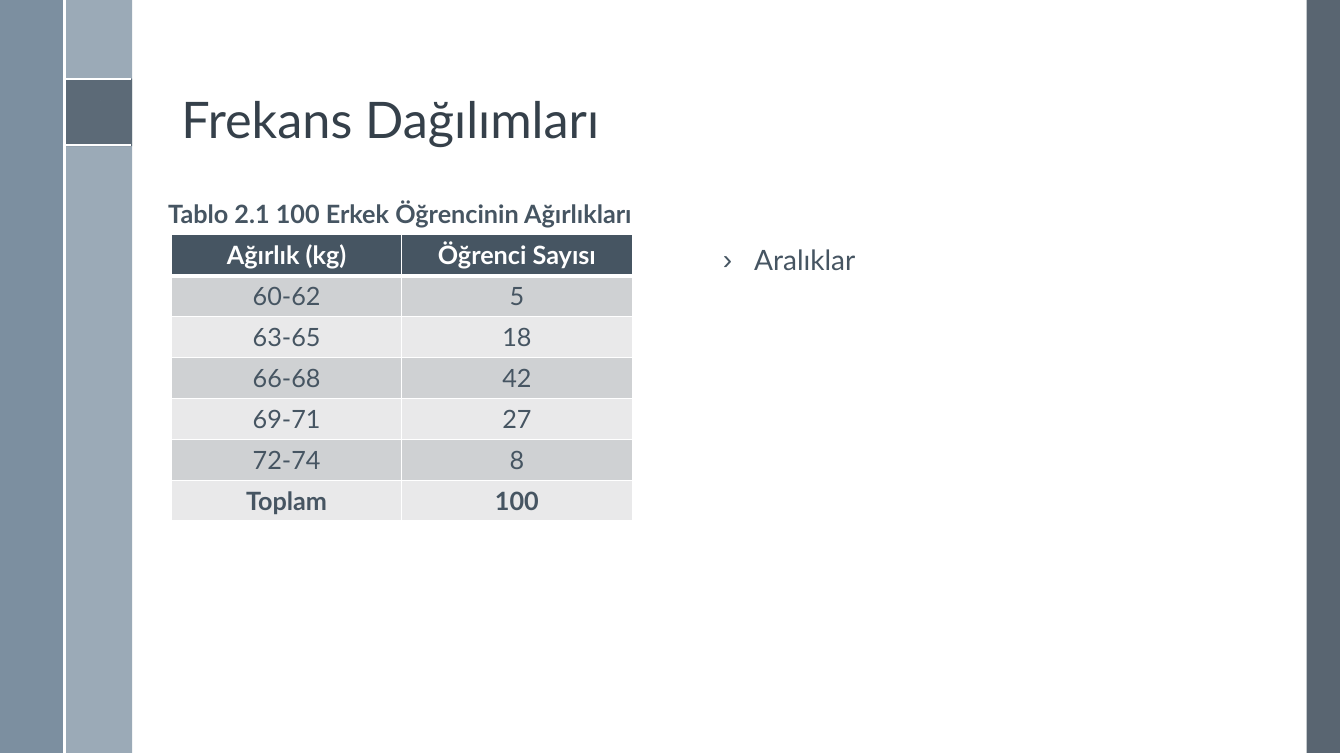
"""Build the slide on frequency distributions with its table of weights."""
from lxml.etree import SubElement
from pptx import Presentation
from pptx.dml.color import RGBColor
from pptx.enum.shapes import MSO_CONNECTOR as LINE, MSO_SHAPE as SHAPE
from pptx.enum.text import MSO_ANCHOR as ANCHOR, MSO_AUTO_SIZE as FIT, PP_ALIGN as ALIGN
from pptx.oxml import parse_xml
from pptx.oxml.ns import nsdecls, qn
from pptx.util import Inches, Pt

WHITE = RGBColor(0xFF, 0xFF, 0xFF)
INK = RGBColor(0x35, 0x40, 0x4A)
SLATE = RGBColor(0x46, 0x55, 0x62)
EDGE = RGBColor(0x47, 0x55, 0x62)
STEEL = RGBColor(0x6A, 0x80, 0x93)
MIST = RGBColor(0x9B, 0xAA, 0xB7)
DARK = RGBColor(0xCF, 0xD1, 0xD3)
LIGHT = RGBColor(0xE9, 0xE9, 0xEA)


def write(frame, text, size=18, color=SLATE, bold=False, align=ALIGN.LEFT, space=1.0):
    para = frame.paragraphs[0]
    para.alignment = align
    para.line_spacing = space
    para.space_before = Pt(0)
    run = para.add_run()
    run.text = text
    run.font.name = "Lato"
    run.font.size = Pt(size)
    run.font.bold = bold
    run.font.color.rgb = color
    return para


def paint(shape, color, alpha=100):
    shape.shadow.inherit = False
    shape.fill.solid()
    shape.fill.fore_color.rgb = color
    shape.line.fill.background()
    if alpha < 100:
        tone = shape._element.spPr.find(qn("a:solidFill"))[0]
        SubElement(tone, qn("a:alpha")).set("val", str(alpha * 1000))


deck = Presentation()
deck.slide_width, deck.slide_height = Inches(13.33), Inches(7.5)
slide = deck.slides.add_slide(deck.slide_layouts[1])
shapes = slide.shapes

BARS = [
    (12.96, -0.03, 0.33, 7.5, EDGE, 90),
    (0.64, -0.03, 0.67, 7.5, MIST, 100),
    (-0.04, -0.03, 0.67, 7.5, STEEL, 88),
    (0.64, 0.78, 0.67, 0.67, EDGE, 75),
]
for *box, color, alpha in BARS:
    bar = shapes.add_shape(SHAPE.RECTANGLE, *map(Inches, box))
    paint(bar, color, alpha)

RULES = [
    (0.64, 0.78, 1.3, 0.78),
    (0.64, 1.44, 1.3, 1.44),
    (0.64, -0.03, 0.64, 7.47),
]
for ends in RULES:
    rule = shapes.add_connector(LINE.STRAIGHT, *map(Inches, ends))
    rule.line.color.rgb = WHITE
    rule.line.width = Pt(1.5)
    SubElement(rule._element.spPr, qn("a:effectLst"))

PI = [
    (1.14, 0.95), (0.86, 0.95), (0.82, 0.97), (0.79, 1.01), (0.8, 1.03),
    (0.81, 1.02), (0.83, 0.99), (0.86, 0.98), (0.9, 0.98), (0.89, 1.08),
    (0.87, 1.18), (0.84, 1.24), (0.84, 1.26), (0.86, 1.26), (0.89, 1.21),
    (0.91, 1.13), (0.93, 0.98), (1.02, 0.98), (1.01, 1.19), (1.01, 1.23),
    (1.03, 1.26), (1.05, 1.28), (1.08, 1.28), (1.12, 1.26), (1.15, 1.2),
    (1.14, 1.18), (1.12, 1.19), (1.1, 1.23), (1.07, 1.25), (1.04, 1.24),
    (1.03, 1.22), (1.03, 1.19), (1.05, 0.98), (1.14, 0.98), (1.15, 0.97),
]
pen = shapes.build_freeform(*PI[0], scale=Inches(1))
pen.add_line_segments(PI[1:], close=True)
paint(pen.convert_to_shape(), WHITE)

title = shapes.title
title.left, title.top, title.width, title.height = map(Inches, (1.7, 0.17, 10.7, 1.36))
title.text_frame.auto_size = FIT.NONE
title.text_frame.vertical_anchor = ANCHOR.BOTTOM
write(title.text_frame, "Frekans Dağılımları", size=36, color=INK, space=0.9)

ROWS = [
    ("Ağırlık (kg)", "Öğrenci Sayısı"),
    ("60-62", "5"),
    ("63-65", "18"),
    ("66-68", "42"),
    ("69-71", "27"),
    ("72-74", "8"),
    ("Toplam", "100"),
]
last = len(ROWS) - 1
grid = shapes.add_table(len(ROWS), 2, *map(Inches, (1.7, 2.33, 4.57, 2.84))).table
for i, row in enumerate(ROWS):
    for j, text in enumerate(row):
        cell = grid.cell(i, j)
        head = i == 0
        cell.fill.solid()
        cell.fill.fore_color.rgb = SLATE if head else DARK if i % 2 else LIGHT
        write(cell.text_frame, text, color=WHITE if head else SLATE,
              bold=i in (0, last), align=ALIGN.CENTER)
        for k, side in enumerate("LRTB"):
            thick = (head and side == "B") or (i == 1 and side == "T")
            width = Pt(3 if thick else 1)
            cell._tc.tcPr.insert(k, parse_xml(
                f'<a:ln{side} {nsdecls("a")} w="{width}"><a:solidFill>'
                f'<a:srgbClr val="{WHITE}"/></a:solidFill></a:ln{side}>'))

label = shapes.add_textbox(*map(Inches, (1.57, 1.92, 5.12, 0.4))).text_frame
label.word_wrap = True
write(label, "Tablo 2.1 100 Erkek Öğrencinin Ağırlıkları", bold=True)

body = slide.placeholders[1]
body.left, body.top, body.width, body.height = map(Inches, (7.07, 2.36, 4.17, 0.44))
body.text_frame.auto_size = FIT.NONE
item = write(body.text_frame, "Aralıklar", size=20)
props = item._p.get_or_add_pPr()
props.set("marL", str(Inches(0.31)))
props.set("indent", str(Inches(-0.31)))
SubElement(props, qn("a:buChar")).set("char", "›")

deck.save("out.pptx")
